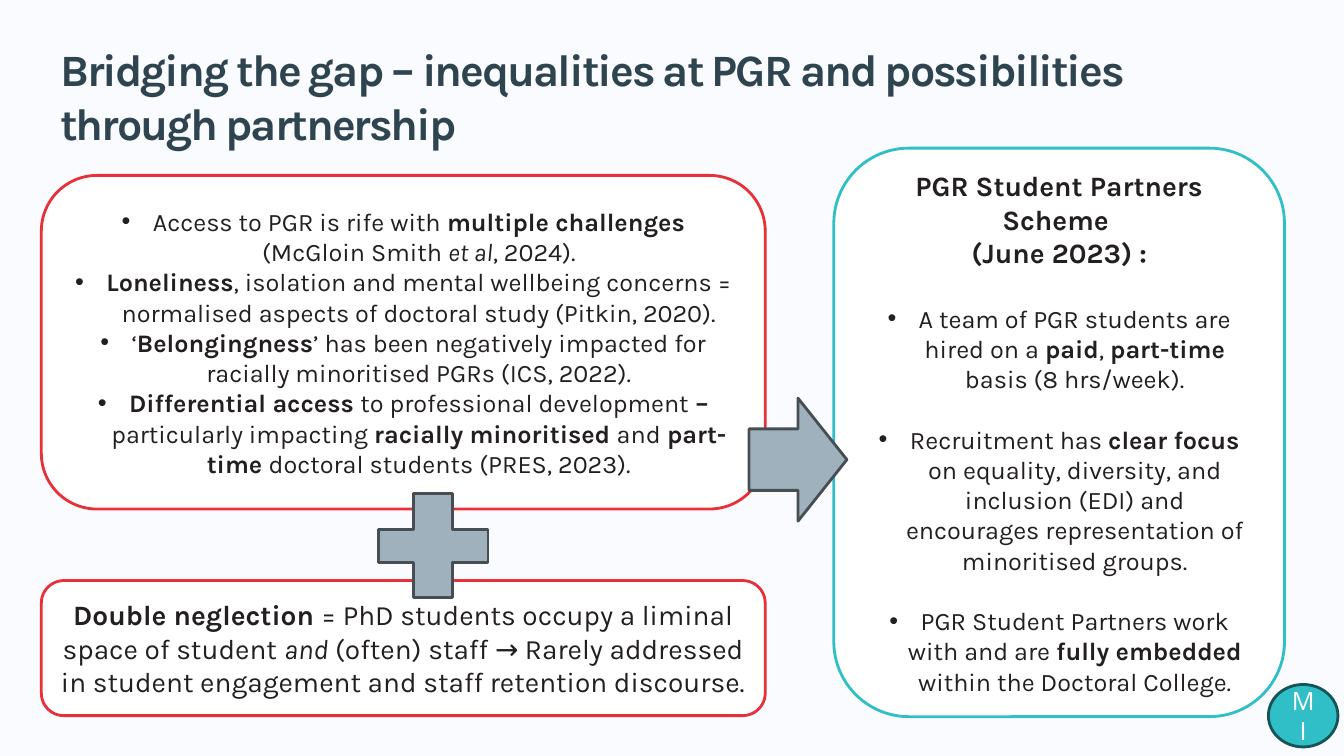
from lxml import etree
from pptx import Presentation
from pptx.dml.color import RGBColor
from pptx.enum.shapes import MSO_SHAPE
from pptx.enum.text import MSO_ANCHOR, PP_ALIGN
from pptx.oxml.ns import qn
from pptx.util import Inches, Pt

ROUNDED = MSO_SHAPE.ROUNDED_RECTANGLE
ELLIPSE = MSO_SHAPE.OVAL
ARROW = MSO_SHAPE.RIGHT_ARROW
PLUS = MSO_SHAPE.CROSS
LEFT = PP_ALIGN.LEFT
CENTER = PP_ALIGN.CENTER
MIDDLE = MSO_ANCHOR.MIDDLE
BOTTOM = MSO_ANCHOR.BOTTOM

BACKGROUND = "F9FBFF"
WHITE = "FFFFFF"
INK = "231F20"
TITLE_INK = "2E444E"
RED = "E73037"
TEAL = "31BFC7"
DARK_TEAL = "155457"
GREY = "9FB1BD"
DARK_GREY = "464E53"

TITLE = "Bridging the gap – inequalities at PGR and possibilities through partnership"
CHALLENGES = [
    "Access to PGR is rife with **multiple challenges **(McGloin Smith *et al*, 2024).",
    "**Loneliness**, isolation and mental wellbeing concerns = normalised aspects of "
    "doctoral study (Pitkin, 2020).",
    "‘**Belongingness**’ has been negatively impacted for racially minoritised PGRs (ICS, 2022).",
    "**Differential access **to professional development** – **particularly impacting "
    "**racially minoritised **and** part-time **doctoral students (PRES, 2023).",
]
NEGLECTION = (
    "**Double neglection **= PhD students occupy a liminal space of student *and* (often) "
    "staff → Rarely addressed in student engagement and staff retention discourse."
)
SCHEME_HEADING = ["**PGR Student Partners Scheme **", "**(June 2023) :**"]
SCHEME_POINTS = [
    "A team of PGR students are hired on a **paid**, **part-time** basis (8 hrs/week).",
    "Recruitment has **clear focus **on equality, diversity, and inclusion (EDI) and "
    "encourages representation of minoritised groups.",
    "PGR Student Partners work with and are **fully embedded **within the Doctoral College.",
]


def color(value):
    """Turn a hex string into a colour."""
    return RGBColor.from_string(value)


def add_bullet(paragraph):
    """Give a paragraph a round bullet with a hanging indent."""
    properties = paragraph._p.get_or_add_pPr()
    properties.set("marL", str(Inches(0.31)))
    properties.set("indent", str(-Inches(0.31)))
    etree.SubElement(properties, qn("a:buFont")).set("typeface", "Arial")
    etree.SubElement(properties, qn("a:buChar")).set("char", "•")


def add_text(frame, text, size=18, font="Karla", ink=INK, align=CENTER,
             bullet=False, before=0, tracking=0):
    """Append a paragraph in which ** marks bold and * marks italic."""
    paragraph = frame.paragraphs[0]
    if paragraph.runs:
        paragraph = frame.add_paragraph()
    if bullet:
        add_bullet(paragraph)
    paragraph.alignment = align
    if before:
        paragraph.space_before = Pt(before)
    for bold_index, part in enumerate(text.split("**")):
        for italic_index, piece in enumerate(part.split("*")):
            if not piece:
                continue
            run = paragraph.add_run()
            run.text = piece
            run.font.name = font
            run.font.size = Pt(size)
            run.font.color.rgb = color(ink)
            run.font.bold = bold_index % 2 == 1
            run.font.italic = italic_index % 2 == 1
            if tracking:
                run.font._element.set("spc", str(int(tracking * 100)))


def add_outlined(slide, kind, box, fill, line):
    """Add a filled and outlined shape and return it."""
    shape = slide.shapes.add_shape(kind, *map(Inches, box))
    shape.shadow.inherit = False
    shape.fill.solid()
    shape.fill.fore_color.rgb = color(fill)
    shape.line.color.rgb = color(line)
    shape.line.width = Pt(2)
    shape.text_frame.word_wrap = True
    shape.text_frame.vertical_anchor = MIDDLE
    return shape


def add_title(slide, box):
    """Add the slide title, resting on the bottom of its box."""
    frame = slide.shapes.add_textbox(*map(Inches, box)).text_frame
    frame.word_wrap = True
    frame.vertical_anchor = BOTTOM
    frame.margin_top = frame.margin_bottom = 0
    add_text(frame, f"**{TITLE}**", size=32, ink=TITLE_INK, align=LEFT, tracking=-1.5)


def add_badge(slide, box):
    """Add the round badge with initials."""
    badge = add_outlined(slide, ELLIPSE, box, TEAL, DARK_TEAL)
    add_text(badge.text_frame, "MI", font="Open Sans", ink=WHITE)


def add_problems(slide, box):
    """Add the two red panels and the plus sign that joins them."""
    left, top, width, height = box
    lower_height, upper_height = 1.34, 3.31
    lower_top = top + height - lower_height
    lower = add_outlined(slide, ROUNDED, (left, lower_top, width, lower_height), WHITE, RED)
    add_text(lower.text_frame, NEGLECTION, size=20)
    upper = add_outlined(slide, ROUNDED, (left, top, width, upper_height), WHITE, RED)
    for challenge in CHALLENGES:
        add_text(upper.text_frame, challenge, bullet=True)
    plus_box = (left + 3.34, top + upper_height - 0.15, 1.09, 1.03)
    plus = add_outlined(slide, PLUS, plus_box, GREY, DARK_GREY)
    plus.adjustments[0] = 0.341


def add_scheme(slide, box):
    """Add the teal panel on the scheme and the arrow leading into it."""
    left, top = box[:2]
    frame = add_outlined(slide, ROUNDED, box, WHITE, TEAL).text_frame
    for line in SCHEME_HEADING:
        add_text(frame, line, size=20)
    for index, point in enumerate(SCHEME_POINTS):
        add_text(frame, point, bullet=True, before=21.6 if index else 24)
    add_outlined(slide, ARROW, (left - 0.84, top + 2.48, 0.97, 1.22), GREY, DARK_GREY)


def main():
    """Build and save the slide."""
    presentation = Presentation()
    presentation.slide_width = Inches(13.33)
    presentation.slide_height = Inches(7.5)
    slide = presentation.slides.add_slide(presentation.slide_layouts[6])
    slide.background.fill.solid()
    slide.background.fill.fore_color.rgb = color(BACKGROUND)
    add_title(slide, (0.5, 0.46, 11.01, 1.02))
    add_badge(slide, (12.58, 6.79, 0.69, 0.62))
    add_problems(slide, (0.41, 1.74, 7.18, 5.36))
    add_scheme(slide, (8.27, 1.47, 4.47, 5.64))
    presentation.save("out.pptx")


if __name__ == "__main__":
    main()
